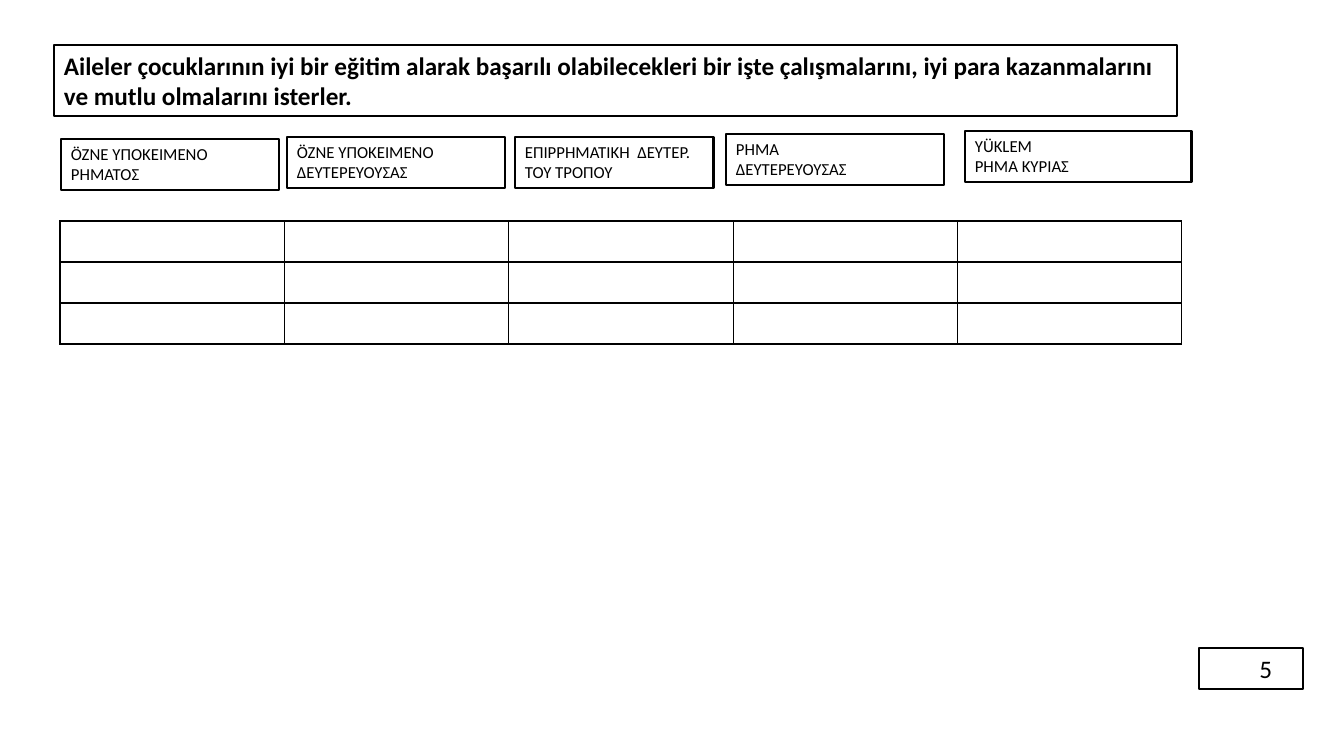
import pptx
import pptx.dml.color
import pptx.enum.shapes
import pptx.enum.text
import pptx.oxml
import pptx.oxml.ns
import pptx.util

EMU_PER_PX = 914400 / 100.8
INK, PAPER = "000000", "FFFFFF"
ALIGN = pptx.enum.text.PP_ALIGN
LABELS = [
    (61, 139, 218, ["ÖZNE ΥΠΟΚΕΙΜΕΝΟ", "ΡΗΜΑΤΟΣ"]),
    (287, 137, 218, ["ÖZNE ΥΠΟΚΕΙΜΕΝΟ", "ΔΕΥΤΕΡΕΥΟΥΣΑΣ"]),
    (515, 137, 199, ["ΕΠΙΡΡΗΜΑΤΙΚΗ  ΔΕΥΤΕΡ.", "ΤΟΥ ΤΡΟΠΟΥ"]),
    (726, 134, 218, ["ΡΗΜΑ", "ΔΕΥΤΕΡΕΥΟΥΣΑΣ"]),
    (965, 131, 227, ["YÜKLEM", "ΡΗΜΑ ΚΥΡΙΑΣ"]),
]


def px(n):
    """Turn pixels into EMU."""
    return pptx.util.Emu(round(n * EMU_PER_PX))


def colour(value):
    """Turn a hex string into a colour."""
    return pptx.dml.color.RGBColor.from_string(value)


def paint(target, value):
    """Give a shape, cell or line a solid fill."""
    target.fill.solid()
    target.fill.fore_color.rgb = colour(value)


def set_all(obj, values):
    """Set every attribute named in a dict."""
    for name, value in values.items():
        setattr(obj, name, value)


def add_box(s, x, y, w, h, lines, size, bold=False, align=ALIGN.LEFT, right=10):
    """Add an outlined box with one paragraph per line."""
    sp = s.shapes.add_shape(pptx.enum.shapes.MSO_SHAPE.RECTANGLE, px(x), px(y), px(w), px(h))
    sp.shadow.inherit = False
    paint(sp, PAPER)
    paint(sp.line, INK)
    sp.line.width = pptx.util.Pt(2)
    tf = sp.text_frame
    set_all(tf, {
        "word_wrap": True,
        "auto_size": pptx.enum.text.MSO_AUTO_SIZE.SHAPE_TO_FIT_TEXT,
        "vertical_anchor": pptx.enum.text.MSO_ANCHOR.TOP,
        "margin_right": px(right),
    })
    for i, line in enumerate(lines):
        p = tf.add_paragraph() if i else tf.paragraphs[0]
        p.alignment = align
        r = p.add_run()
        r.text = line
        set_all(r.font, {"name": "Calibri", "size": pptx.util.Pt(size), "bold": bold})
        r.font.color.rgb = colour(INK)


def add_borders(cell):
    """Draw a thin line on each side of a cell."""
    tc_pr = cell._tc.get_or_add_tcPr()
    for i, side in enumerate(("lnL", "lnR", "lnT", "lnB")):
        tc_pr.insert(i, pptx.oxml.parse_xml(
            f'<a:{side} {pptx.oxml.ns.nsdecls("a")} w="12700"><a:solidFill>'
            f'<a:srgbClr val="{INK}"/></a:solidFill></a:{side}>'))


def add_grid(s, x, y, w, h, rows, cols):
    """Add an empty table with even rows and columns."""
    table = s.shapes.add_table(rows, cols, px(x), px(y), px(w), px(h)).table
    for cell in table.iter_cells():
        paint(cell, PAPER)
        add_borders(cell)


def main():
    """Build and save the slide."""
    prs = pptx.Presentation()
    set_all(prs, {"slide_width": px(1344), "slide_height": px(756)})
    s = prs.slides.add_slide(prs.slide_layouts[6])
    add_box(s, 54, 45, 1123, 71, [
        "Aileler çocuklarının iyi bir eğitim alarak başarılı olabilecekleri bir işte "
        "çalışmalarını, iyi para kazanmalarını ve mutlu olmalarını isterler."], 18, bold=True)
    add_grid(s, 60, 221, 1122, 123, 3, 5)
    add_box(s, 1199, 648, 104, 41, ["5"], 18, align=ALIGN.RIGHT, right=31)
    for x, y, w, lines in LABELS:
        add_box(s, x, y, w, 51, lines, 12)
    prs.save("out.pptx")


if __name__ == "__main__":
    main()
